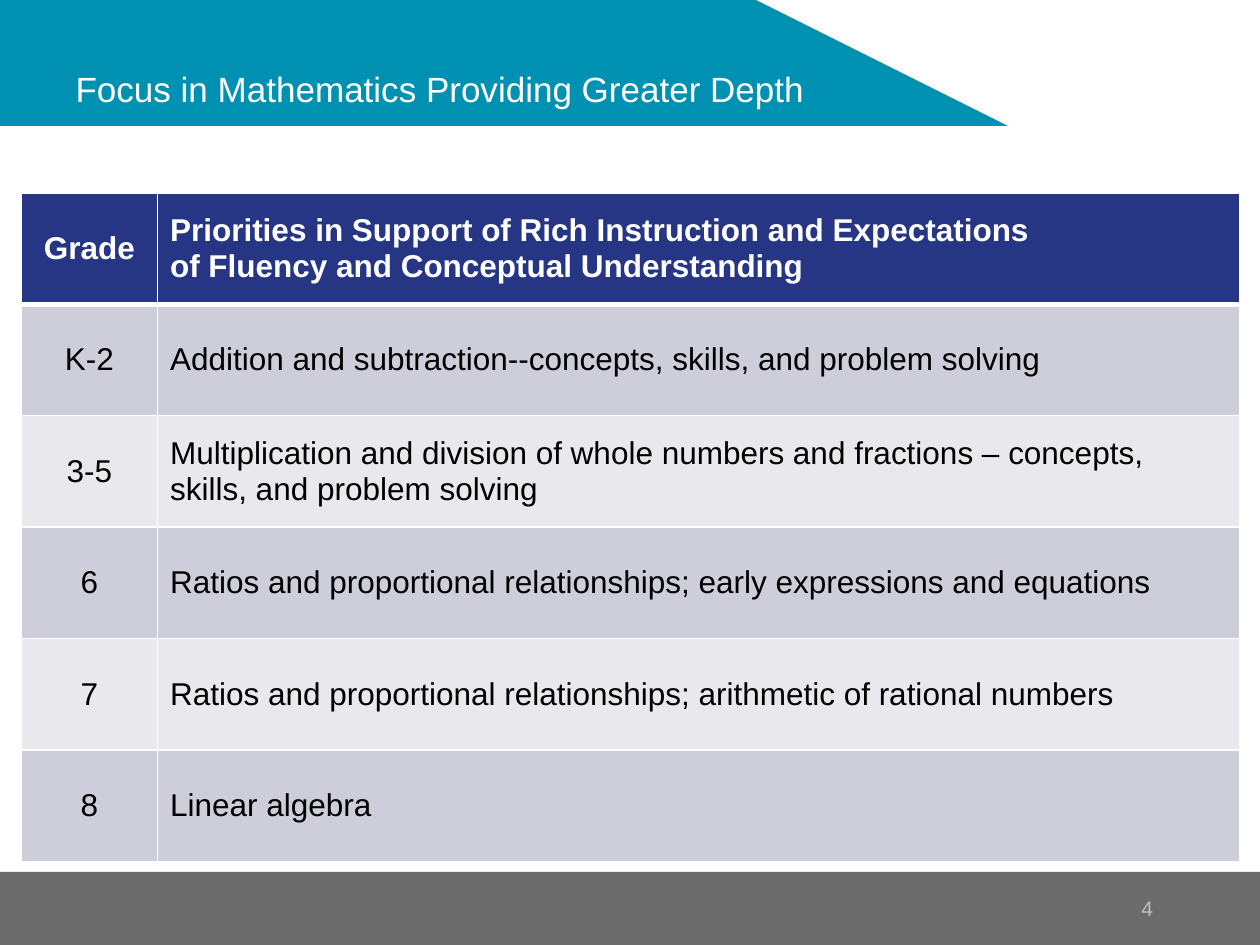
from typing import NamedTuple

from lxml.etree import SubElement
from pptx import Presentation
from pptx.dml.color import RGBColor
from pptx.enum.shapes import MSO_SHAPE
from pptx.enum.text import MSO_ANCHOR, MSO_AUTO_SIZE, PP_ALIGN
from pptx.oxml.ns import qn
from pptx.util import Inches, Pt

WHITE = RGBColor(0xFF, 0xFF, 0xFF)
BLACK = RGBColor(0x00, 0x00, 0x00)
TEAL = RGBColor(0x00, 0x91, 0xB2)
NAVY = RGBColor(0x26, 0x36, 0x85)
FOOTER_GREY = RGBColor(0x6B, 0x6B, 0x6B)
NUMBER_GREY = RGBColor(0xBF, 0xBF, 0xBF)
BANDS = (RGBColor(0xCD, 0xCE, 0xD9), RGBColor(0xE8, 0xE8, 0xED))

BANNER_H, FOOTER_TOP, FOOTER_H = 1.41, 6.92, 0.58
COLUMN_WIDTHS = (1.08, 8.59)
TABLE_H = 5.31


class GradeRow(NamedTuple):
    grade: str
    priority: str


HEADER = GradeRow("Grade", "Priorities in Support of Rich Instruction and Expectations\n"
                           "of Fluency and Conceptual Understanding")
ROWS = [
    GradeRow("K-2", "Addition and subtraction--concepts, skills, and problem solving"),
    GradeRow("3-5", "Multiplication and division of whole numbers and fractions – concepts, "
                    "skills, and problem solving"),
    GradeRow("6", "Ratios and proportional relationships; early expressions and equations"),
    GradeRow("7", "Ratios and proportional relationships; arithmetic of rational numbers"),
    GradeRow("8", "Linear algebra"),
]


def write(tf, text: str, *, size: float, color: RGBColor, bold: bool = False,
          align=PP_ALIGN.LEFT) -> None:
    """Fill a text frame, one paragraph per line."""
    for i, line in enumerate(text.split("\n")):
        p = tf.add_paragraph() if i else tf.paragraphs[0]
        p.alignment = align
        r = p.add_run()
        r.text = line
        r.font.name, r.font.size, r.font.bold = "Arial", Pt(size), bold
        r.font.color.rgb = color


def paint(sp, color: RGBColor) -> None:
    sp.shadow.inherit = False
    sp.fill.solid()
    sp.fill.fore_color.rgb = color
    sp.line.fill.background()


def add_borders(cell, color: RGBColor, **widths: float) -> None:
    """Draw cell borders; keywords are the sides L, R, T and B in points."""
    tc_pr = cell._tc.get_or_add_tcPr()
    for side, width in widths.items():
        ln = SubElement(tc_pr, qn(f"a:ln{side}"), w=str(Pt(width)))
        SubElement(SubElement(ln, qn("a:solidFill")), qn("a:srgbClr"), val=str(color))


def fill_row(table, index: int, row: GradeRow) -> None:
    is_header = index == 0
    for cell, text, align in zip(table.rows[index].cells, row,
                                 (PP_ALIGN.CENTER, PP_ALIGN.LEFT)):
        add_borders(cell, WHITE, L=1, R=1, T=3 if index == 1 else 1, B=3 if is_header else 1)
        cell.fill.solid()
        cell.fill.fore_color.rgb = NAVY if is_header else BANDS[(index - 1) % 2]
        cell.vertical_anchor = MSO_ANCHOR.MIDDLE
        write(cell.text_frame, text, size=18, color=WHITE if is_header else BLACK,
              bold=is_header, align=align)


def main() -> None:
    prs = Presentation()
    prs.slide_width, prs.slide_height = Inches(10), Inches(7.5)
    s = prs.slides.add_slide(prs.slide_layouts[5])

    # Footer bar and slanted banner
    footer = s.shapes.add_shape(MSO_SHAPE.RECTANGLE, 0, Inches(FOOTER_TOP),
                                Inches(10), Inches(FOOTER_H))
    paint(footer, FOOTER_GREY)
    builder = s.shapes.build_freeform(0, 0, scale=Inches(1))
    builder.add_line_segments([(5.58, 0), (7.92, BANNER_H), (0, BANNER_H)], close=True)
    paint(builder.convert_to_shape(), TEAL)

    # Title, brought in front of the banner
    title = s.shapes.title
    title.left, title.top = 0, 0
    title.width, title.height = Inches(6.67), Inches(BANNER_H)
    tf = title.text_frame
    tf.auto_size, tf.word_wrap = MSO_AUTO_SIZE.NONE, True
    tf.vertical_anchor, tf.margin_left = MSO_ANCHOR.MIDDLE, Inches(0.6)
    write(tf, "Focus in Mathematics Providing Greater Depth", size=20, color=WHITE)
    s.shapes._spTree.append(title._element)

    # Slide number
    number = s.shapes.add_textbox(Inches(7.58), Inches(FOOTER_TOP), Inches(1.67), Inches(FOOTER_H))
    tf = number.text_frame
    tf.word_wrap, tf.vertical_anchor = True, MSO_ANCHOR.MIDDLE
    write(tf, "4", size=12, color=NUMBER_GREY, align=PP_ALIGN.RIGHT)

    # Table of priorities by grade
    rows = [HEADER, *ROWS]
    table = s.shapes.add_table(len(rows), len(COLUMN_WIDTHS), Inches(0.17), Inches(1.53),
                               Inches(sum(COLUMN_WIDTHS)), Inches(TABLE_H)).table
    for column, width in zip(table.columns, COLUMN_WIDTHS):
        column.width = Inches(width)
    for i, row in enumerate(rows):
        fill_row(table, i, row)

    prs.save("out.pptx")


if __name__ == "__main__":
    main()
